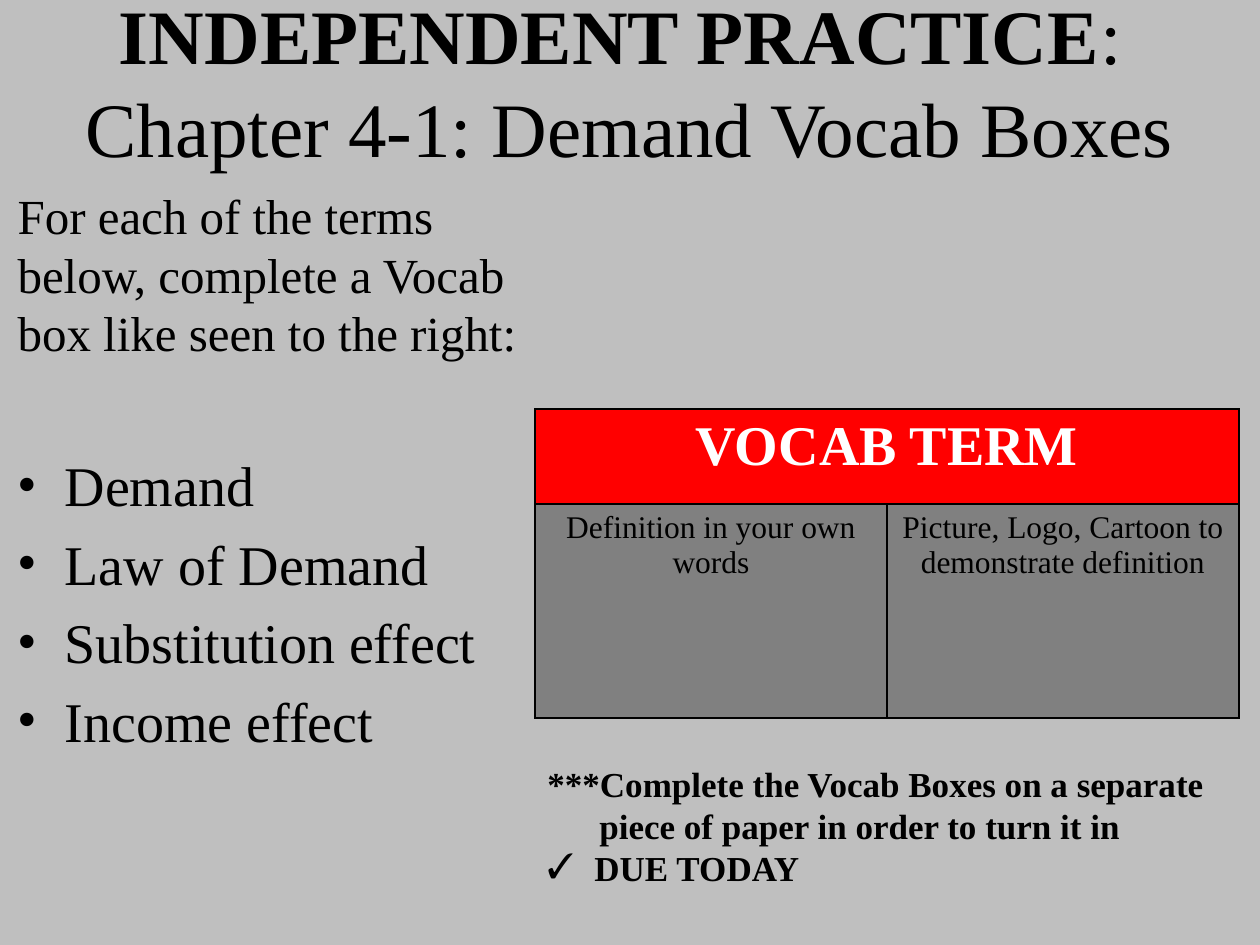
"""Build the vocabulary box practice slide."""
from dataclasses import dataclass

from lxml.etree import SubElement
from pptx import Presentation
from pptx.dml.color import RGBColor
from pptx.enum.text import MSO_ANCHOR, MSO_AUTO_SIZE, PP_ALIGN
from pptx.oxml.ns import qn
from pptx.util import Emu, Pt


@dataclass(frozen=True)
class Theme:
    font: str = "Times New Roman"
    background: str = "BFBFBF"
    ink: str = "000000"
    banner: str = "FF0000"
    banner_ink: str = "FFFFFF"
    panel: str = "808080"
    title: int = 44
    intro: int = 28
    term: int = 32
    cell: int = 18
    note: int = 20
    leading: float = 1.2
    hanging: int = 47


def px(length):
    return Emu(round(length * 914400 / 126))


class SlideBuilder:
    def __init__(self, slide, theme):
        self.slide = slide
        self.theme = theme
        fill = slide.background.fill
        fill.solid()
        fill.fore_color.rgb = RGBColor.from_string(theme.background)

    def place(self, shape, left, top, width, height):
        shape.left, shape.top = px(left), px(top)
        shape.width, shape.height = px(width), px(height)
        frame = shape.text_frame
        frame.word_wrap = True
        frame.auto_size = MSO_AUTO_SIZE.NONE
        return frame

    def run(self, paragraph, text, size, bold=False, color=None):
        run = paragraph.add_run()
        run.text = text
        font = run.font
        font.name, font.size, font.bold = self.theme.font, Pt(size), bold
        font.color.rgb = RGBColor.from_string(color or self.theme.ink)

    def paragraph(self, frame, text, size, bold=False, before=0, bullet=None, margin=0):
        first = frame.paragraphs[0]
        paragraph = frame.add_paragraph() if first.runs else first
        paragraph.line_spacing = Pt(size * self.theme.leading)
        paragraph.space_before = Pt(before)
        properties = paragraph._p.get_or_add_pPr()
        hanging = self.theme.hanging if bullet else 0
        properties.set("marL", str(px(hanging or margin)))
        properties.set("indent", str(-px(hanging)))
        if bullet:
            SubElement(properties, qn("a:buFont"), typeface=self.theme.font)
            SubElement(properties, qn("a:buChar"), char=bullet)
        else:
            SubElement(properties, qn("a:buNone"))
        self.run(paragraph, text, size, bold)

    def title(self, heading, subject, box):
        frame = self.place(self.slide.shapes.title, *box)
        frame.vertical_anchor = MSO_ANCHOR.MIDDLE
        paragraph = frame.paragraphs[0]
        paragraph.alignment = PP_ALIGN.CENTER
        paragraph.line_spacing = Pt(self.theme.title * self.theme.leading)
        self.run(paragraph, heading, self.theme.title, bold=True)
        self.run(paragraph, ": ", self.theme.title)
        paragraph.add_line_break()
        self.run(paragraph, subject, self.theme.title)

    def term_list(self, intro, terms, box):
        frame = self.place(self.slide.placeholders[1], *box)
        frame.vertical_anchor = MSO_ANCHOR.TOP
        self.paragraph(frame, intro, self.theme.intro)
        for index, term in enumerate(terms):
            before = 6.4 if index else 51
            self.paragraph(frame, term, self.theme.term, before=before, bullet="•")

    def cell(self, cell, text, size, fill, bold=False, color=None):
        cell.fill.solid()
        cell.fill.fore_color.rgb = RGBColor.from_string(fill)
        paragraph = cell.text_frame.paragraphs[0]
        paragraph.alignment = PP_ALIGN.CENTER
        self.run(paragraph, text, size, bold, color)

    def border(self, cell):
        properties = cell._tc.get_or_add_tcPr()
        for index, side in enumerate(("lnL", "lnR", "lnT", "lnB")):
            line = SubElement(properties, qn(f"a:{side}"), w=str(Pt(1)))
            solid = SubElement(line, qn("a:solidFill"))
            SubElement(solid, qn("a:srgbClr"), val=self.theme.ink)
            properties.insert(index, line)

    def vocab_box(self, term, prompts, left, top, column_width, row_heights):
        theme = self.theme
        table = self.slide.shapes.add_table(
            len(row_heights), len(prompts), px(left), px(top),
            px(column_width * len(prompts)), px(sum(row_heights)),
        ).table
        table.first_row = table.horz_banding = False
        for row, height in zip(table.rows, row_heights):
            row.height = px(height)
        banner = table.cell(0, 0)
        banner.merge(table.cell(0, len(prompts) - 1))
        self.cell(banner, term, theme.term, theme.banner, True, theme.banner_ink)
        for column, prompt in enumerate(prompts):
            self.cell(table.cell(1, column), prompt, theme.cell, theme.panel)
        for cell in table.iter_cells():
            self.border(cell)

    def note(self, lines, deadline, box):
        frame = self.place(self.slide.shapes.add_textbox(0, 0, 0, 0), *box)
        size = self.theme.note
        for text, margin in lines:
            self.paragraph(frame, text, size, bold=True, margin=margin)
        self.paragraph(frame, deadline, size, bold=True, bullet="✓")


def main():
    deck = Presentation()
    deck.slide_width, deck.slide_height = px(1260), px(945)
    slide = deck.slides.add_slide(deck.slide_layouts[1])
    builder = SlideBuilder(slide, Theme())
    builder.title(
        "INDEPENDENT PRACTICE", "Chapter 4-1: Demand Vocab Boxes", (0, 1, 1260, 158)
    )
    builder.term_list(
        "For each of the terms below, complete a Vocab box like seen to the right:",
        ("Demand", "Law of Demand", "Substitution effect", "Income effect"),
        (5, 179, 525, 567),
    )
    builder.vocab_box(
        "VOCAB TERM",
        ("Definition in your own words", "Picture, Logo, Cartoon to demonstrate definition"),
        535, 409, 352, (95, 214),
    )
    builder.note(
        (
            ("***Complete the Vocab Boxes on a separate", 0),
            ("piece of paper in order to turn it in", 52),
        ),
        "DUE TODAY",
        (535, 756, 703, 140),
    )
    deck.save("out.pptx")


if __name__ == "__main__":
    main()
